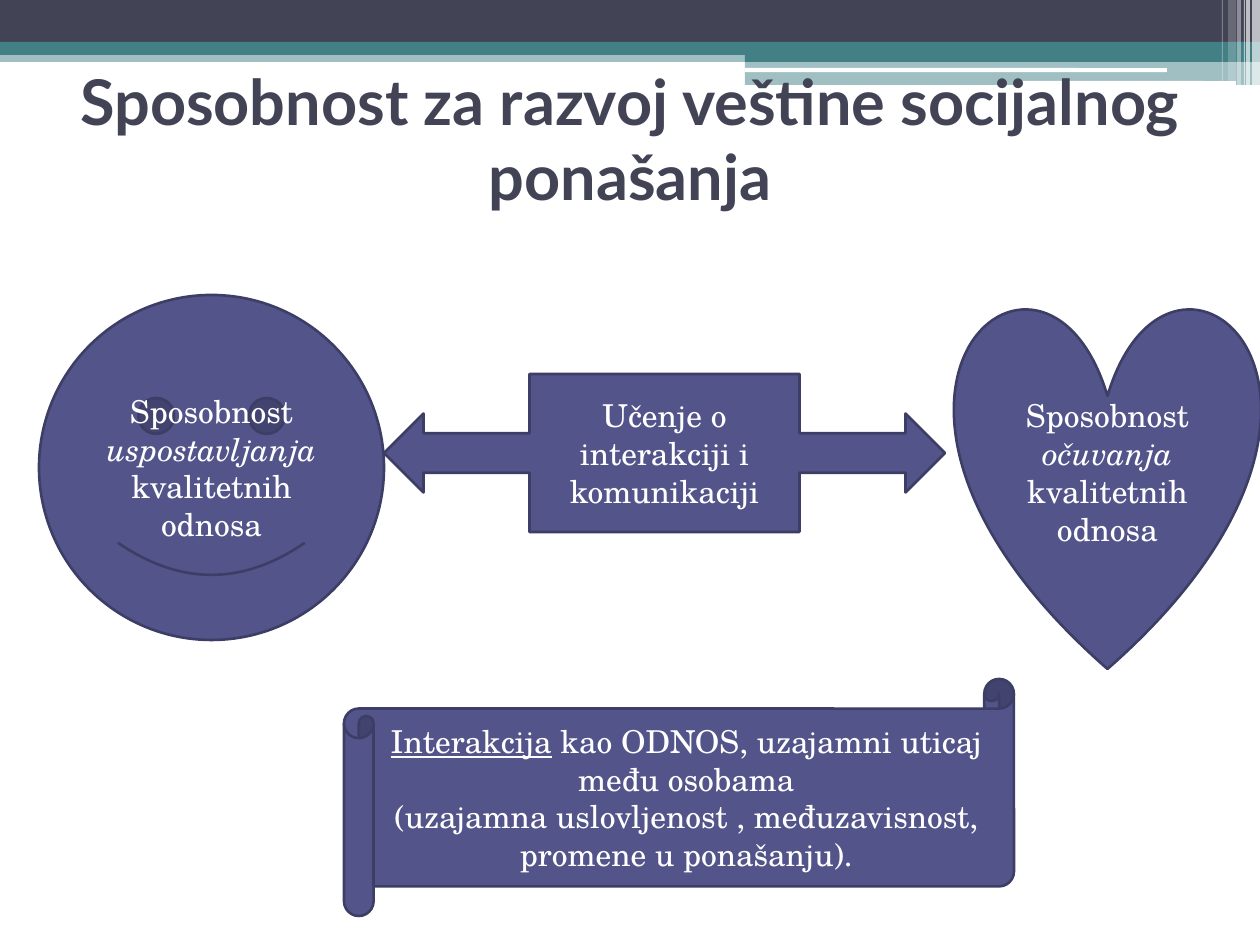
from lxml import etree
from pptx import Presentation
from pptx import util as u
from pptx.dml.color import RGBColor
from pptx.enum import shapes, text
from pptx.oxml.ns import qn

KIND = shapes.MSO_SHAPE
PX_PER_INCH = 126
WHITE, NAVY, TEAL = "FFFFFF", "424456", "438086"
PLAIN, ITALIC, UNDERLINE = {}, {"italic": True}, {"underline": True}


def px(length):
    return u.Inches(length / PX_PER_INCH)


def color(value):
    return RGBColor.from_string(value)


class SlideBuilder:
    title_style = {"name": "Lato", "size": u.Pt(36), "bold": True}
    body_style = {"name": "TeX Gyre Schola", "size": u.Pt(18)}
    figure_fill, figure_line = "53548A", "3D3E66"

    def __init__(self, deck):
        self.page = deck.slides.add_slide(deck.slide_layouts[6])

    def shape(self, kind, area, fill):
        shape = self.page.shapes.add_shape(kind, *map(px, area))
        shape.shadow.inherit = False
        shape.fill.solid()
        shape.fill.fore_color.rgb = color(fill)
        return shape

    def band(self, area, fill, opacity=100, kind=KIND.RECTANGLE):
        band = self.shape(kind, area, fill)
        band.line.fill.background()
        if opacity < 100:
            tint = band.element.spPr.find(".//" + qn("a:srgbClr"))
            etree.SubElement(tint, qn("a:alpha"), val=str(opacity * 1000))

    def add_text(self, box, paragraphs, style, ink):
        frame = box.text_frame
        frame.word_wrap = True
        frame.vertical_anchor = text.MSO_ANCHOR.MIDDLE
        for index, spans in enumerate(paragraphs):
            para = frame.add_paragraph() if index else frame.paragraphs[0]
            para.alignment = text.PP_ALIGN.CENTER
            for words, extra in spans:
                span = para.add_run()
                span.text = words
                span.font.color.rgb = color(ink)
                for name, value in {**style, **extra}.items():
                    setattr(span.font, name, value)

    def title(self, area, words):
        box = self.page.shapes.add_textbox(*map(px, area))
        self.add_text(box, [[(words, PLAIN)]], self.title_style, NAVY)

    def figure(self, kind, area, paragraphs):
        figure = self.shape(kind, area, self.figure_fill)
        figure.line.color.rgb = color(self.figure_line)
        figure.line.width = u.Pt(1.5)
        self.add_text(figure, paragraphs, self.body_style, WHITE)


def main():
    deck = Presentation()
    deck.slide_width, deck.slide_height = px(1260), px(945)
    slide = SlideBuilder(deck)

    slide.band((0, 50, 1260, 12), TEAL, 50)
    slide.band((0, 0, 1260, 42), NAVY)
    slide.band((0, 42, 1260, 13), TEAL)
    slide.band((745, 49, 515, 13), TEAL)
    slide.band((745, 61, 515, 24), TEAL, 50)
    slide.band((745, 68, 422, 4), WHITE, kind=KIND.ROUNDED_RECTANGLE)
    slide.band((1016, 81, 220, 5), WHITE, kind=KIND.ROUNDED_RECTANGLE)
    for left, width, height, opacity in (
        (1252, 8, 85, 65),
        (1246, 4, 85, 65),
        (1244, 1, 85, 60),
        (1237, 4, 85, 40),
        (1228, 8, 81, 20),
        (1222, 1, 81, 30),
    ):
        slide.band((left, 0, width, height), WHITE, opacity)

    slide.title((63, 69, 1134, 138),
                "Sposobnost za razvoj veštine socijalnog ponašanja")
    slide.figure(KIND.LEFT_RIGHT_ARROW_CALLOUT, (384, 374, 561, 158),
                 [[("Učenje o interakciji i komunikaciji", PLAIN)]])
    slide.figure(KIND.SMILEY_FACE, (39, 295, 345, 345),
                 [[("Sposobnost ", PLAIN), ("uspostavljanja ", ITALIC),
                   ("kvalitetnih odnosa", PLAIN)]])
    slide.figure(KIND.HEART, (955, 305, 305, 364),
                 [[("Sposobnost ", PLAIN), ("očuvanja", ITALIC),
                   (" kvalitetnih odnosa", PLAIN)]])
    slide.figure(KIND.HORIZONTAL_SCROLL, (344, 679, 670, 237),
                 [[("Interakcija", UNDERLINE),
                   (" kao ODNOS, uzajamni uticaj među osobama", PLAIN)],
                  [("(uzajamna uslovljenost , međuzavisnost, "
                    "promene u ponašanju).", PLAIN)]])
    deck.save("out.pptx")


if __name__ == "__main__":
    main()
